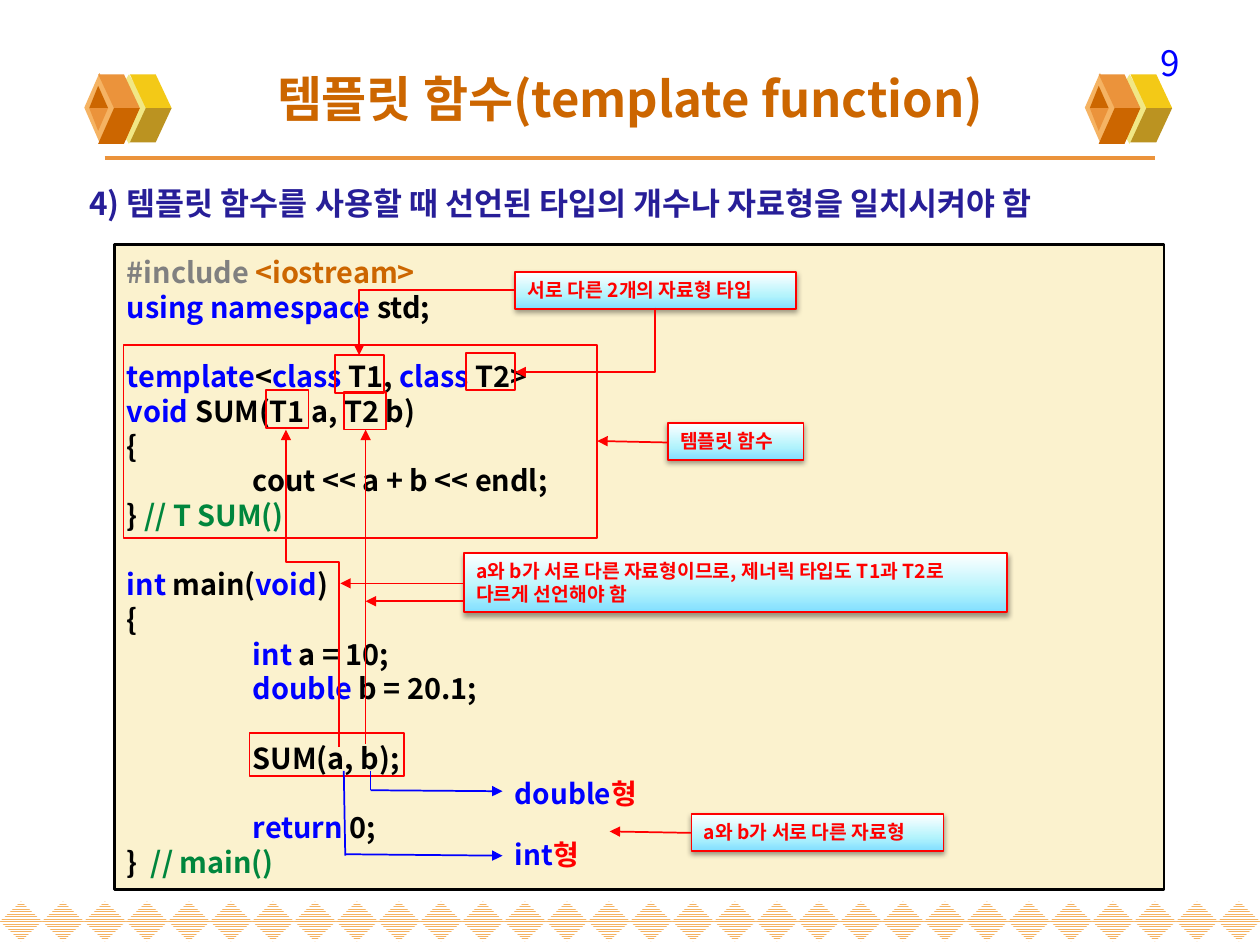
from lxml import etree
from pptx import Presentation
from pptx.dml.color import RGBColor
from pptx.enum.dml import MSO_PATTERN
from pptx.enum.shapes import MSO_CONNECTOR, MSO_SHAPE
from pptx.enum.text import MSO_ANCHOR, PP_ALIGN
from pptx.oxml.ns import qn
from pptx.util import Cm, Pt

STRAIGHT, ELBOW = MSO_CONNECTOR.STRAIGHT, MSO_CONNECTOR.ELBOW
RECTANGLE, DIAMOND = MSO_SHAPE.RECTANGLE, MSO_SHAPE.DIAMOND
NARROW_HORIZONTAL = MSO_PATTERN.NARROW_HORIZONTAL
TOP, MIDDLE = MSO_ANCHOR.TOP, MSO_ANCHOR.MIDDLE
LEFT, CENTER, RIGHT, JUSTIFY = PP_ALIGN.LEFT, PP_ALIGN.CENTER, PP_ALIGN.RIGHT, PP_ALIGN.JUSTIFY

COLORS = {
    "black": "000000", "white": "FFFFFF", "red": "FF0000", "blue": "0000FF",
    "gray": "808080", "green": "00863D", "navy": "271E98", "cream": "FBF2CE",
    "brown": "CC6600", "orange": "EB933B", "apricot": "F5B363",
    "pale": "F1E785", "yellow": "F3C917", "olive": "BB9321",
    "sky": "81DEFF", "ice": "B2F3FC",
}
CODE = [
    (0, 0, [("#include ", "gray"), ("<iostream>", "brown")]),
    (0, 0, [("using namespace", "blue"), (" std;", "black")]),
    (1, 0, [("template", "blue"), ("<", "black"), ("class", "blue"), (" T1, ", "black"),
            ("class", "blue"), (" T2>", "black")]),
    (0, 0, [("void", "blue"), (" SUM(T1 a, T2 b)", "black")]),
    (0, 0, [("{", "black")]),
    (0, 1, [("cout << a + b << endl;", "black")]),
    (0, 0, [("} ", "black"), ("// T SUM()", "green")]),
    (1, 0, [("int", "blue"), (" main(", "black"), ("void", "blue"), (")", "black")]),
    (0, 0, [("{", "black")]),
    (0, 1, [("int", "blue"), (" a = 10;", "black")]),
    (0, 1, [("double", "blue"), (" b = 20.1;", "black")]),
    (1, 1, [("SUM(a, b);", "black")]),
    (1, 1, [("return", "blue"), (" 0;", "black")]),
    (0, 0, [("}  ", "black"), ("// main()", "green")]),
]
CALLOUTS = [
    ((13.46, 8.53, 2.74, 0.74), ["템플릿 함수"]),
    ((10.39, 5.49, 5.66, 0.74), ["서로 다른 2개의 자료형 타입"]),
    ((9.35, 11.15, 10.95, 1.19),
     ["a와 b가 서로 다른 자료형이므로, 제너릭 타입도 T1과 T2로", "다르게 선언해야 함"]),
    ((13.94, 16.41, 5.08, 0.74), ["a와 b가 서로 다른 자료형"]),
]
FRAMES = [
    (6.76, 7.16, 0.99, 0.76), (9.4, 7.11, 0.99, 0.76), (5.36, 7.87, 0.86, 0.76),
    (6.93, 7.9, 0.86, 0.76), (2.49, 6.96, 9.55, 3.89), (5.03, 14.78, 3.12, 0.86),
]
LINES = [
    ((9.35, 12.12, 7.37, 12.12), "red", True), ((13.94, 16.79, 12.29, 16.76), "red", True),
    ((9.35, 11.76, 6.86, 11.76), "red", True), ((13.46, 8.92, 12.04, 8.89), "red", True),
    ((7.37, 14.99, 7.37, 8.66), "red", True),
    ((7.47, 15.54, 7.47, 15.93), "blue", False), ((6.93, 15.54, 6.96, 17.25), "blue", False),
    ((7.47, 15.93, 10.13, 15.95), "blue", True), ((6.96, 17.22, 10.13, 17.25), "blue", True),
]
ELBOWS = [
    ((7.24, 5.84, 3.15, 1.32), 180, True, "bentConnector2", None),
    ((11.15, 5.44, 1.3, 2.82), 90, False, "bentConnector2", None),
    ((3.1, 11.33, 6.4, 1.07), 270, True, "bentConnector3", 58300),
]


def rgb(name):
    return RGBColor.from_string(COLORS[name])


class SlideBuilder:
    font = "Noto Sans CJK KR"

    def __init__(self, slide):
        self.slide = slide
        self.shapes = slide.shapes

    def paint(self, shape, fill=None, line=None, width=1):
        shape.shadow.inherit = False
        if fill:
            shape.fill.solid()
            shape.fill.fore_color.rgb = rgb(fill)
        else:
            shape.fill.background()
        if line:
            shape.line.color.rgb = rgb(line)
            shape.line.width = Pt(width)
        else:
            shape.line.fill.background()
        return shape

    def preset(self, kind, box, fill=None, line=None, width=1):
        return self.paint(self.shapes.add_shape(kind, *map(Cm, box)), fill, line, width)

    def polygon(self, points, fill):
        corners = [(Cm(x), Cm(y)) for x, y in points]
        builder = self.shapes.build_freeform(*corners[0])
        builder.add_line_segments(corners[1:], close=True)
        return self.paint(builder.convert_to_shape(), fill)

    def set_rows(self, shape, rows, size, bold=True, align=LEFT, anchor=TOP, ratio=1.2):
        frame = shape.text_frame
        frame.word_wrap = True
        frame.vertical_anchor = anchor
        for index, (gap, indent, parts) in enumerate(rows):
            paragraph = frame.add_paragraph() if index else frame.paragraphs[0]
            paragraph.alignment = align
            paragraph.line_spacing = Pt(size * ratio)
            paragraph.space_before = Pt(size * ratio * gap)
            if indent:
                paragraph._p.get_or_add_pPr().set("marL", str(Cm(2.54 * indent)))
            for text, color in parts:
                run = paragraph.add_run()
                run.text = text
                run.font.size = Pt(size)
                run.font.bold = bold
                run.font.name = self.font
                run.font.color.rgb = rgb(color)
                etree.SubElement(run._r.rPr, qn("a:ea"), typeface=self.font)

    def text(self, box, parts, size, **style):
        shape = self.shapes.add_textbox(*map(Cm, box))
        self.set_rows(shape, [(0, 0, parts)], size, **style)
        return shape

    def callout(self, box, lines):
        shape = self.preset(RECTANGLE, box, "white", "red")
        shape.fill.gradient()
        shape.fill.gradient_angle = 90
        properties = shape._element.spPr
        stops = properties.find(qn("a:gradFill")).find(qn("a:gsLst"))
        stops.clear()
        for position, color in ((0, "sky"), (35000, "ice"), (100000, "white")):
            stop = etree.SubElement(stops, qn("a:gs"), pos=str(position))
            etree.SubElement(stop, qn("a:srgbClr"), val=COLORS[color])
        shadow = etree.SubElement(properties.find(qn("a:effectLst")), qn("a:outerShdw"),
                                  blurRad=str(Pt(3.1)), dist=str(Pt(1.6)), dir="5400000",
                                  rotWithShape="0")
        shade = etree.SubElement(shadow, qn("a:srgbClr"), val=COLORS["black"])
        etree.SubElement(shade, qn("a:alpha"), val="38000")
        self.set_rows(shape, [(0, 0, [(line, "red")]) for line in lines], 11, align=JUSTIFY)

    def line(self, ends, color, arrow=False, width=1, kind=STRAIGHT):
        connector = self.shapes.add_connector(kind, *map(Cm, ends))
        connector.line.color.rgb = rgb(color)
        connector.line.width = Pt(width)
        properties = connector._element.spPr
        if arrow:
            etree.SubElement(properties.find(qn("a:ln")), qn("a:tailEnd"), type="triangle")
        etree.SubElement(properties, qn("a:effectLst"))
        return connector

    def elbow(self, box, angle, flipped, preset, bend):
        left, top, width, height = box
        connector = self.line((left, top, left + width, top + height), "red", True, kind=ELBOW)
        connector.rotation = angle
        properties = connector._element.spPr
        transform = properties.find(qn("a:xfrm"))
        transform.set("rot", str(angle * 60000))
        if flipped:
            transform.set("flipV", "1")
        geometry = properties.find(qn("a:prstGeom"))
        geometry.set("prst", preset)
        if bend:
            etree.SubElement(geometry.find(qn("a:avLst")), qn("a:gd"),
                             name="adj1", fmla=f"val {bend}")

    def cube(self, shift):
        def slab(left, top_color, bottom_color, end):
            for color, y in ((top_color, 1.5), (bottom_color, end)):
                self.polygon([(left + 0.32, 2.18), (left + 0.84, 2.18),
                              (left + 0.52, y), (left, y)], color)

        self.preset(DIAMOND, (shift + 2.18, 1.5, 0.84, 1.4), "pale")
        slab(shift + 2.62, "yellow", "olive", 2.87)
        self.preset(DIAMOND, (shift + 1.7, 1.47, 0.61, 1.4), "apricot")
        slab(shift + 1.98, "orange", "brown", 2.9)
        for color, y in (("brown", 1.73), ("orange", 2.64)):
            self.polygon([(shift + 1.98, y), (shift + 1.8, 2.18), (shift + 2.18, 2.18)], color)

    def diamond_border(self, count, pitch):
        for index in range(count):
            shape = self.preset(DIAMOND, (index * pitch, 18.17, pitch, 0.81), "white")
            shape.fill.patterned()
            shape.fill.pattern = NARROW_HORIZONTAL
            shape.fill.fore_color.rgb = rgb("apricot")
            shape.fill.back_color.rgb = rgb("white")


def main():
    presentation = Presentation()
    presentation.slide_width, presentation.slide_height = Cm(25.4), Cm(19.05)
    builder = SlideBuilder(presentation.slides.add_slide(presentation.slide_layouts[6]))

    builder.diamond_border(30, 25.4 / 30)
    builder.line((2.11, 3.18, 23.29, 3.18), "orange", width=2.25)
    for shift in (0, 20.17):
        builder.cube(shift)
    builder.text((18.11, 0.71, 5.92, 0.76), [("9", "blue")], 20, bold=False, align=RIGHT)
    builder.text((1.27, 0.76, 22.86, 2.41), [("템플릿 함수(template function)", "brown")], 28,
                 align=CENTER, anchor=MIDDLE)
    heading = builder.text(
        (0.99, 3.73, 23.42, 0.89),
        [("4) 템플릿 함수를 사용할 때 선언된 타입의 개수나 자료형을 일치시켜야 함", "navy")],
        18, ratio=0.96)
    heading.text_frame.margin_left = Cm(0.81)

    panel = builder.preset(RECTANGLE, (2.31, 4.93, 21.16, 13), "cream", "black", 1.5)
    builder.set_rows(panel, CODE, 16.5, anchor=MIDDLE)
    for box, lines in CALLOUTS:
        builder.callout(box, lines)
    for box in FRAMES:
        builder.preset(RECTANGLE, box, line="red")
    for ends, color, arrow in LINES:
        builder.line(ends, color, arrow)
    for elbow in ELBOWS:
        builder.elbow(*elbow)
    for top, type_name in ((15.52, "double"), (16.76, "int")):
        builder.text((10.13, top, 3.23, 0.94), [(type_name, "blue"), ("형", "red")], 16)
    presentation.save("out.pptx")


if __name__ == "__main__":
    main()
